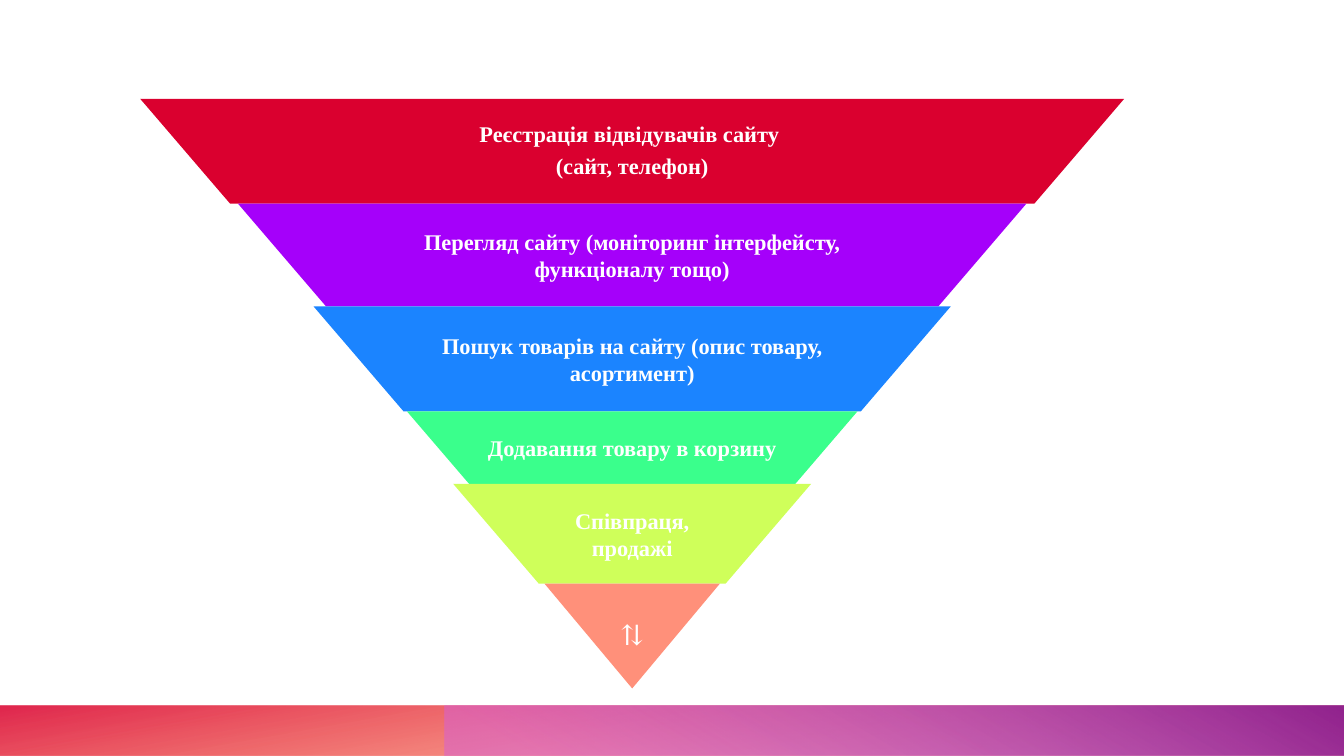
import pptx
import pptx.util
import pptx.dml.color
import pptx.enum.dml
import pptx.enum.shapes
import pptx.enum.text
from lxml import etree
from pptx.oxml.ns import qn

RGBColor = pptx.dml.color.RGBColor
Inches = pptx.util.Inches
Pt = pptx.util.Pt
Shape = pptx.enum.shapes.MSO_SHAPE

WHITE = RGBColor(0xFF, 0xFF, 0xFF)
RED = RGBColor(0xDA, 0x00, 0x2F)
ORANGE = RGBColor(0xFE, 0x4A, 0x00)
VIOLET = RGBColor(0xA5, 0x00, 0xFA)
BLUE = RGBColor(0x1B, 0x84, 0xFF)
GREEN = RGBColor(0x3A, 0xFF, 0x8C)
LIME = RGBColor(0xCF, 0xFF, 0x5A)
SALMON = RGBColor(0xFF, 0x90, 0x7A)
ORCHID = RGBColor(0xD8, 0x61, 0xD4)
PLUM = RGBColor(0x92, 0x24, 0x8E)

SLIDE_WIDTH, SLIDE_HEIGHT = 13.33, 7.5
FOOTER_HEIGHT = SLIDE_HEIGHT / 15
FUNNEL_AXIS, FUNNEL_TOP = 6.27, 0.98
LABEL_SHARE = 0.65
SLANT = 0.857

# width, height, colour, label paragraphs
STAGES = [
    (9.76, 1.04, RED, ["Реєстрація відвідувачів сайту ", "(сайт, телефон)"]),
    (7.82, 1.02, VIOLET, ["Перегляд сайту (моніторинг інтерфейсту, функціоналу тощо)"]),
    (6.32, 1.04, BLUE, ["Пошук товарів на сайту (опис товару, асортимент)"]),
    (4.47, 0.72, GREEN, ["Додавання товару в корзину"]),
    (3.55, 0.99, LIME, ["Співпраця,", "продажі"]),
]
TIP_WIDTH, TIP_HEIGHT = 1.74, 1.04


def add_footer_band(slide, left, angle, stops):
    """Add a gradient band from left to the slide's right edge; stops are (position, colour, opacity)."""
    band = slide.shapes.add_shape(
        Shape.RECTANGLE, Inches(left), Inches(SLIDE_HEIGHT - FOOTER_HEIGHT),
        Inches(SLIDE_WIDTH - left), Inches(FOOTER_HEIGHT))
    band.shadow.inherit = False
    band.line.fill.background()
    band.fill.gradient()
    band.fill.gradient_angle = angle
    for stop, (position, colour, opacity) in zip(band.fill.gradient_stops, stops):
        stop.position = position
        stop.color.rgb = colour
    for rgb, (_, _, opacity) in zip(band.fill._xPr.iter(qn("a:srgbClr")), stops):
        etree.SubElement(rgb, qn("a:alpha"), val=str(round(opacity * 100000)))


def add_stage(funnel, top, width, height, colour, slant):
    stage = funnel.shapes.add_shape(
        Shape.TRAPEZOID, Inches(FUNNEL_AXIS - width / 2), Inches(top),
        Inches(width), Inches(height))
    stage.rotation = 180
    stage.adjustments[0] = slant
    stage.shadow.inherit = False
    stage.fill.solid()
    stage.fill.fore_color.rgb = colour
    stage.line.fill.background()


def add_label(funnel, top, width, height, lines, size=16, bold=True, spaced=False):
    label = funnel.shapes.add_textbox(
        Inches(FUNNEL_AXIS - width / 2), Inches(top), Inches(width), Inches(height))
    frame = label.text_frame
    frame.word_wrap = True
    frame.vertical_anchor = pptx.enum.text.MSO_ANCHOR.MIDDLE
    frame.margin_left = frame.margin_right = Inches(0.02)
    frame.margin_top = frame.margin_bottom = Inches(0.02)
    frame.text = "\n".join(lines)
    for paragraph in frame.paragraphs:
        paragraph.alignment = pptx.enum.text.PP_ALIGN.CENTER
        if spaced:
            paragraph.line_spacing = 0.9
            paragraph.space_after = Pt(0.35 * size)
        paragraph.font.name = "Times New Roman"
        paragraph.font.size = Pt(size)
        paragraph.font.bold = bold
        paragraph.font.color.rgb = WHITE


def add_funnel(slide):
    funnel = slide.shapes.add_group_shape()
    top = FUNNEL_TOP
    for width, height, colour, lines in STAGES:
        add_stage(funnel, top, width, height, colour, SLANT)
        add_label(funnel, top, width * LABEL_SHARE, height, lines, spaced=top == FUNNEL_TOP)
        top += height
    add_stage(funnel, top, TIP_WIDTH, TIP_HEIGHT, SALMON, TIP_WIDTH / TIP_HEIGHT / 2)
    add_label(funnel, top, TIP_WIDTH, TIP_HEIGHT, ["⇅"], size=20, bold=False, spaced=True)


def main():
    deck = pptx.Presentation()
    deck.slide_width = Inches(SLIDE_WIDTH)
    deck.slide_height = Inches(SLIDE_HEIGHT)
    slide = deck.slides.add_slide(deck.slide_layouts[6])
    add_footer_band(slide, 0, 100, [(0.14, ORANGE, 0.28), (1, RED, 0.85)])
    add_footer_band(slide, SLIDE_WIDTH * 0.331, 60, [(0.09, ORCHID, 0.55), (0.99, PLUM, 1)])
    add_funnel(slide)
    deck.save("out.pptx")


if __name__ == "__main__":
    main()
